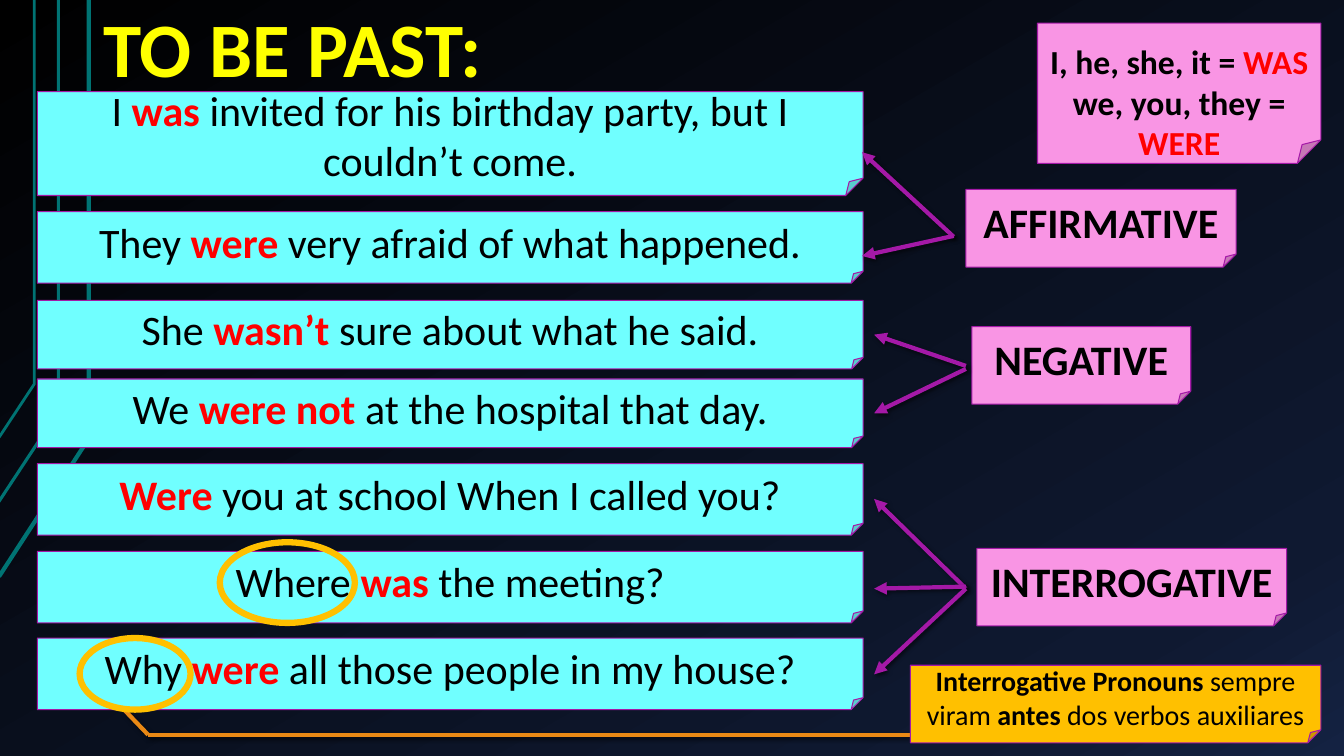
from lxml import etree
from pptx import Presentation
from pptx.dml.color import RGBColor
from pptx.enum.shapes import MSO_CONNECTOR, MSO_SHAPE
from pptx.enum.text import MSO_ANCHOR, MSO_AUTO_SIZE, PP_ALIGN
from pptx.oxml import parse_xml
from pptx.oxml.ns import nsdecls, qn
from pptx.util import Inches, Pt

FOLDED = MSO_SHAPE.FOLDED_CORNER
OVAL = MSO_SHAPE.OVAL
STRAIGHT = MSO_CONNECTOR.STRAIGHT
CENTER, LEFT = PP_ALIGN.CENTER, PP_ALIGN.LEFT
MIDDLE, TOP = MSO_ANCHOR.MIDDLE, MSO_ANCHOR.TOP
NO_AUTOFIT = MSO_AUTO_SIZE.NONE

FONT = "Calibri"
COLORS = {
    "black": "000000",
    "night": "0F1931",
    "navy": "142242",
    "teal": "007373",
    "cyan": "70FFFF",
    "pink": "F995E4",
    "purple": "A419A7",
    "red": "FF0000",
    "yellow": "FFFF00",
    "gold": "FFC000",
    "orange": "E98915",
}

SENTENCES = [
    (0.91, 1.03, "I *was *invited for his birthday party, but I couldn’t come."),
    (2.1, 0.71, "They *were *very afraid of what happened."),
    (2.98, 0.68, "She *wasn’t *sure about what he said."),
    (3.76, 0.68, "We *were not *at the hospital that day."),
    (4.6, 0.71, "*Were *you at school When I called you?"),
    (5.47, 0.71, "Where *was *the meeting?"),
    (6.33, 0.71, "Why *were *all those people in my house?"),
]
FORMS = [
    ("AFFIRMATIVE", 9.58, 1.88, 2.68),
    ("NEGATIVE", 9.64, 3.24, 2.17),
    ("INTERROGATIVE", 9.69, 5.44, 3.07),
]
ARROWS = [
    (9.46, 2.35, 8.55, 1.51),
    (9.46, 2.34, 8.55, 2.54),
    (9.58, 3.63, 8.67, 3.32),
    (9.58, 3.66, 8.67, 4.1),
    (9.58, 5.84, 8.67, 4.95),
    (9.58, 5.82, 8.67, 5.84),
    (9.58, 5.84, 8.67, 6.69),
]
PRONOUN_LINES = [(1.23, 7.04, 1.47, 7.29), (1.47, 7.29, 9.03, 7.29)]
PRONOUN_RINGS = [(0.79, 6.33, 1.1, 0.71), (2.18, 5.38, 1.34, 0.8)]
CIRCUIT_LINES = [
    (3, [(-0.01, 5.72), (0.88, 4.35), (0.88, 0)]),
    (2.25, [(-0.02, 4.99), (0.58, 4.08), (0.58, 0)]),
    (2, [(-0.01, 4.34), (0.34, 3.81), (0.34, 0)]),
]


def rgb(color):
    return RGBColor.from_string(COLORS[color])


def set_line(shape, color, width):
    shape.line.color.rgb = rgb(color)
    shape.line.width = Pt(width)


def paint_background(slide):
    stops = "".join(
        f'<a:gs pos="{percent * 1000}"><a:srgbClr val="{COLORS[color]}"/></a:gs>'
        for percent, color in [(0, "black"), (85, "night"), (100, "navy")]
    )
    background = parse_xml(
        f'<p:bg {nsdecls("p", "a")}><p:bgPr><a:gradFill><a:gsLst>{stops}</a:gsLst>'
        f'<a:lin ang="{60 * 60000}" scaled="0"/></a:gradFill><a:effectLst/></p:bgPr></p:bg>'
    )
    slide.element.cSld.insert(0, background)


def add_circuit_line(slide, width, points):
    builder = slide.shapes.build_freeform(
        Inches(points[0][0]), Inches(points[0][1]), scale=1.0
    )
    builder.add_line_segments([(Inches(x), Inches(y)) for x, y in points[1:]], close=False)
    circuit = builder.convert_to_shape()
    circuit.fill.background()
    circuit.shadow.inherit = False
    set_line(circuit, "teal", width)


def write_text(shape, text, size, color="black", bold=False, accent="red", align=CENTER, anchor=MIDDLE):
    frame = shape.text_frame
    frame.text = text.replace("*", "")
    frame.word_wrap = True
    frame.auto_size = NO_AUTOFIT
    frame.vertical_anchor = anchor
    for paragraph, marked in zip(frame.paragraphs, text.split("\n")):
        paragraph.alignment = align
        paragraph.clear()
        for index, words in enumerate(marked.split("*")):
            if not words:
                continue
            accented = index % 2 == 1
            run = paragraph.add_run()
            run.text = words
            run.font.name = FONT
            run.font.size = Pt(size)
            run.font.bold = bold or accented
            run.font.color.rgb = rgb(accent if accented else color)


def add_title(slide):
    title = slide.shapes.title
    title.left, title.top = Inches(0.93), Inches(-0.04)
    title.width, title.height = Inches(5.39), Inches(1.03)
    write_text(title, "TO BE PAST:", 55, color="yellow", bold=True, align=LEFT, anchor=TOP)


def add_card(slide, left, top, width, height, fill, text, size, **style):
    card = slide.shapes.add_shape(FOLDED, Inches(left), Inches(top), Inches(width), Inches(height))
    card.shadow.inherit = False
    card.fill.solid()
    card.fill.fore_color.rgb = rgb(fill)
    set_line(card, "purple", 0.75)
    write_text(card, text, size, **style)
    return card


def add_ring(slide, left, top, width, height):
    ring = slide.shapes.add_shape(OVAL, Inches(left), Inches(top), Inches(width), Inches(height))
    ring.shadow.inherit = False
    ring.fill.background()
    set_line(ring, "gold", 4.5)


def add_line(slide, x1, y1, x2, y2, color, arrow=False):
    line = slide.shapes.add_connector(STRAIGHT, Inches(x1), Inches(y1), Inches(x2), Inches(y2))
    set_line(line, color, 3)
    if arrow:
        etree.SubElement(line.line._get_or_add_ln(), qn("a:tailEnd"), type="triangle")
    effects = etree.SubElement(line.element.spPr, qn("a:effectLst"))
    shadow = etree.SubElement(
        effects, qn("a:outerShdw"), blurRad=str(Pt(3)), dist=str(Pt(2)), dir=str(45 * 60000)
    )
    shade = etree.SubElement(shadow, qn("a:srgbClr"), val=COLORS["black"])
    etree.SubElement(shade, qn("a:alpha"), val="60000")


def main():
    deck = Presentation()
    deck.slide_width, deck.slide_height = Inches(13.33), Inches(7.5)
    slide = deck.slides.add_slide(deck.slide_layouts[5])
    paint_background(slide)
    for width, points in CIRCUIT_LINES:
        add_circuit_line(slide, width, points)
    add_title(slide)
    for top, height, sentence in SENTENCES:
        add_card(slide, 0.37, top, 8.19, height, "cyan", sentence, 30)
    rule = add_card(
        slide, 10.29, 0.23, 2.81, 1.39, "pink",
        "I, he, she, it = *WAS*\nwe, you, they = *WERE*", 24, bold=True,
    )
    rule.text_frame.margin_top = Inches(0.45)
    for form, left, top, width in FORMS:
        add_card(slide, left, top, width, 0.77, "pink", form, 30, bold=True)
    for ends in ARROWS:
        add_line(slide, *ends, "purple", arrow=True)
    for ends in PRONOUN_LINES:
        add_line(slide, *ends, "orange")
    add_card(
        slide, 9.03, 6.6, 4.07, 0.77, "gold",
        "*Interrogative Pronouns *sempre viram *antes* dos verbos auxiliares", 20, accent="black",
    )
    for box in PRONOUN_RINGS:
        add_ring(slide, *box)
    deck.save("out.pptx")


if __name__ == "__main__":
    main()
